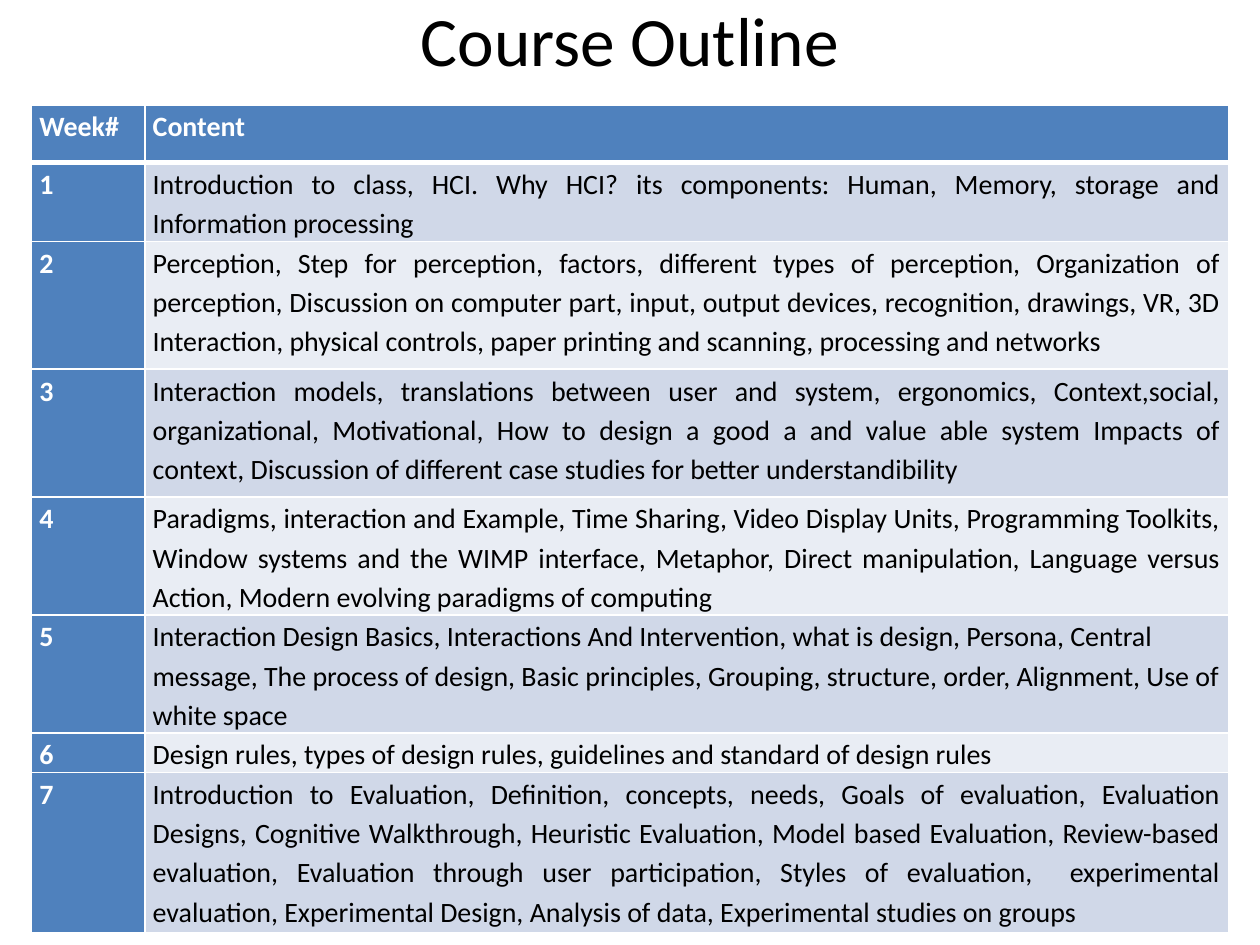
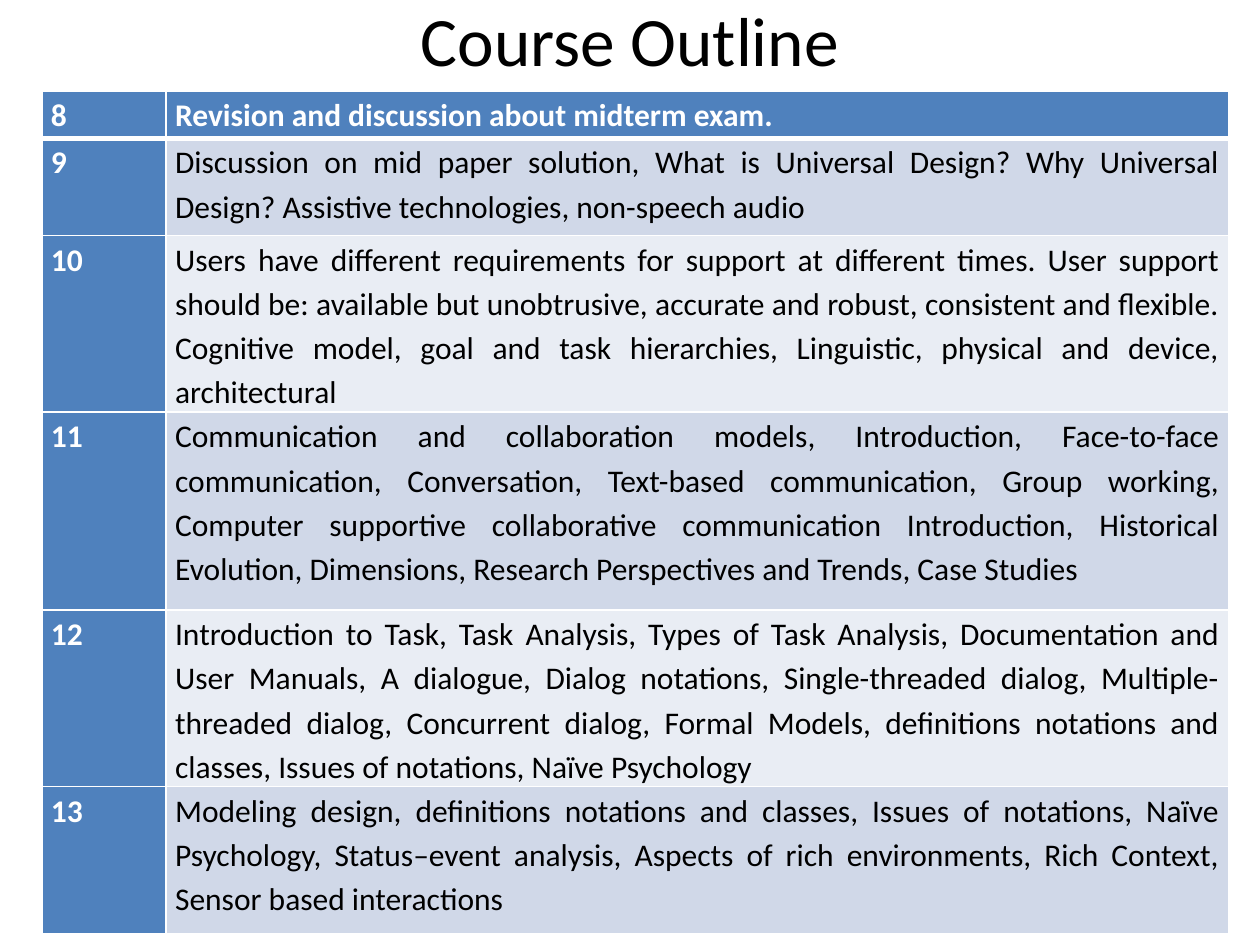
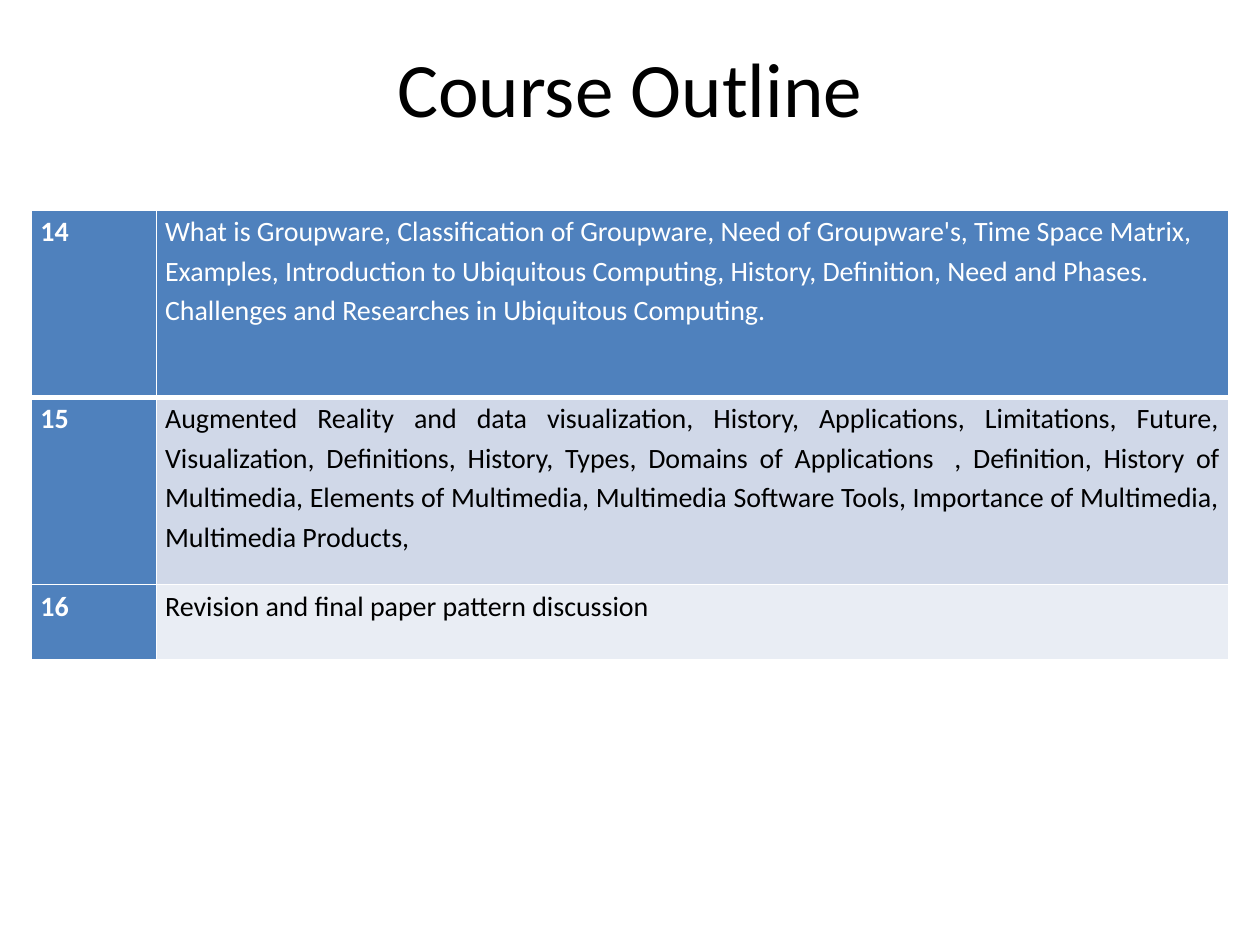
"""Build the three course outline slides, each a title above a table of weeks."""
from dataclasses import dataclass

from lxml.etree import SubElement
from pptx import Presentation
from pptx.dml.color import RGBColor
from pptx.enum.text import MSO_ANCHOR, MSO_AUTO_SIZE, PP_ALIGN
from pptx.oxml.ns import qn
from pptx.slide import Slide
from pptx.table import _Cell
from pptx.text.text import _Paragraph
from pptx.util import Pt

FONT = "Calibri"
COLORS = {
    "head": "4F81BD",
    "odd": "D0D8E8",
    "even": "E9EDF4",
    "light": "FFFFFF",
    "dark": "000000",
}
TITLE = "Course Outline"


@dataclass
class Week:
    label: str
    text: str
    height: float
    left: bool = False


@dataclass
class Head:
    top: float
    height: float
    size: float


@dataclass
class Plan:
    head: Head
    left: float
    top: float
    cols: tuple[float, float]
    size: float
    inset: float
    weeks: list[Week]
    bold: bool = True


SMALL = Head(2, 40, 39.6)
LARGE = Head(18, 63, 44)

PLANS = [
    Plan(SMALL, 18, 60, (64.8, 619.2), 16, 4.5, [
        Week("Week#", "Content", 33),
        Week("1", "Introduction to class, HCI. Why HCI? its components: Human, Memory, "
             "storage and Information processing", 39.6),
        Week("2", "Perception, Step for perception, factors, different types of perception, "
             "Organization of perception, Discussion on computer part, input, output devices, "
             "recognition, drawings, VR, 3D Interaction, physical controls, paper printing and "
             "scanning, processing and networks", 73),
        Week("3", "Interaction models, translations between user and system, ergonomics, "
             "Context,social, organizational, Motivational, How to design a good a and value "
             "able system Impacts of context, Discussion of different case studies for better "
             "understandibility", 73),
        Week("4", "Paradigms, interaction and Example, Time Sharing, Video Display Units, "
             "Programming Toolkits, Window systems and the WIMP interface, Metaphor, Direct "
             "manipulation, Language versus Action, Modern evolving paradigms of computing", 60.5),
        Week("5", "Interaction Design Basics, Interactions And Intervention, what is design, "
             "Persona, Central message, The process of design, Basic principles, Grouping, "
             "structure, order, Alignment, Use of white space", 60.5, True),
        Week("6", "Design rules, types of design rules, guidelines and standard of design rules",
             19.5, True),
        Week("7", "Introduction to Evaluation, Definition, concepts, needs, Goals of evaluation, "
             "Evaluation Designs, Cognitive Walkthrough, Heuristic Evaluation, Model based "
             "Evaluation, Review-based evaluation, Evaluation through user participation, Styles "
             "of evaluation,  experimental evaluation, Experimental Design, Analysis of data, "
             "Experimental studies on groups", 91.5),
    ]),
    Plan(SMALL, 24, 52, (71, 607), 18, 5.1, [
        Week("8", "Revision and discussion about midterm exam.", 27),
        Week("9", "Discussion on mid paper solution, What is Universal Design? Why Universal "
             "Design? Assistive technologies, non-speech audio", 55.5),
        Week("10", "Users have different requirements for support at different times. User "
             "support should be: available but unobtrusive, accurate and robust, consistent and "
             "flexible. Cognitive model, goal and task hierarchies, Linguistic, physical and "
             "device, architectural", 97),
        Week("11", "Communication and collaboration models, Introduction, Face-to-face "
             "communication, Conversation, Text-based communication, Group working, Computer "
             "supportive collaborative communication Introduction, Historical Evolution, "
             "Dimensions, Research Perspectives and Trends, Case Studies", 113),
        Week("12", "Introduction to Task, Task Analysis, Types of Task Analysis, Documentation "
             "and User Manuals, A dialogue, Dialog notations, Single-threaded dialog, "
             "Multiple-threaded dialog, Concurrent dialog, Formal Models, definitions notations "
             "and classes, Issues of notations, Naïve Psychology", 97),
        Week("13", "Modeling design, definitions notations and classes, Issues of notations, "
             "Naïve Psychology, Status–event analysis, Aspects of rich environments, Rich "
             "Context, Sensor based interactions", 84),
    ]),
    Plan(LARGE, 18, 120, (71.3, 612.7), 16, 5.1, [
        Week("14", "What is Groupware, Classification of Groupware, Need of Groupware's, Time "
             "Space Matrix, Examples, Introduction to Ubiquitous Computing, History, "
             "Definition, Need and Phases. Challenges and Researches in Ubiquitous Computing.",
             107, True),
        Week("15", "Augmented Reality and data visualization, History, Applications, "
             "Limitations, Future, Visualization, Definitions, History, Types, Domains of "
             "Applications\t, Definition, History of Multimedia, Elements of Multimedia, "
             "Multimedia Software Tools, Importance of Multimedia, Multimedia Products,", 107),
        Week("16", "Revision and final paper pattern discussion", 43),
    ], bold=False),
]


def style(para: _Paragraph, size: float, color: str, bold: bool) -> None:
    for run in para.runs:
        font = run.font
        font.name, font.size, font.bold = FONT, Pt(size), bold
        font.color.rgb = RGBColor.from_string(COLORS[color])


def edge(cell: _Cell, row: int) -> None:
    props = cell._tc.get_or_add_tcPr()
    thick = {0: "lnB", 1: "lnT"}.get(row)
    for side in ("lnL", "lnR", "lnT", "lnB"):
        width = Pt(3 if side == thick else 1)
        line = SubElement(props, qn(f"a:{side}"), w=str(width))
        fill = SubElement(line, qn("a:solidFill"))
        SubElement(fill, qn("a:srgbClr"), val=COLORS["light"])


def fill_cell(cell: _Cell, text: str, row: int, fill: str, plan: Plan,
              bold: bool, left: bool) -> None:
    edge(cell, row)
    cell.fill.solid()
    cell.fill.fore_color.rgb = RGBColor.from_string(COLORS[fill])
    cell.margin_left = cell.margin_right = Pt(plan.inset)
    cell.margin_top = cell.margin_bottom = Pt(0)
    cell.text_frame.text = text
    para = cell.text_frame.paragraphs[0]
    para.alignment = PP_ALIGN.LEFT if left else PP_ALIGN.JUSTIFY
    para.line_spacing = 1.15
    tabs = SubElement(para._p.get_or_add_pPr(), qn("a:tabLst"))
    SubElement(tabs, qn("a:tab"), pos=str(Pt(-36)), algn="l")
    style(para, plan.size, "light" if fill == "head" else "dark", bold)


def add_title(slide: Slide, head: Head) -> None:
    title = slide.shapes.title
    title.left, title.top = Pt(36), Pt(head.top)
    title.width, title.height = Pt(648), Pt(head.height)
    frame = title.text_frame
    frame.text = TITLE
    frame.auto_size = MSO_AUTO_SIZE.NONE
    frame.vertical_anchor = MSO_ANCHOR.MIDDLE
    frame.paragraphs[0].alignment = PP_ALIGN.CENTER
    style(frame.paragraphs[0], head.size, "dark", False)


def add_weeks(slide: Slide, plan: Plan) -> None:
    height = sum(week.height for week in plan.weeks)
    table = slide.shapes.add_table(
        len(plan.weeks), 2, Pt(plan.left), Pt(plan.top), Pt(sum(plan.cols)), Pt(height)
    ).table
    for col, width in zip(table.columns, plan.cols):
        col.width = Pt(width)
    for row, week in enumerate(plan.weeks):
        table.rows[row].height = Pt(week.height)
        band = "head" if row == 0 else "odd" if row % 2 else "even"
        fill_cell(table.cell(row, 0), week.label, row, "head", plan, True, False)
        fill_cell(table.cell(row, 1), week.text, row, band, plan,
                  row == 0 and plan.bold, week.left)


def main() -> None:
    deck = Presentation()
    deck.slide_width, deck.slide_height = Pt(720), Pt(540)
    for plan in PLANS:
        slide = deck.slides.add_slide(deck.slide_layouts[5])
        add_title(slide, plan.head)
        add_weeks(slide, plan)
    deck.save("out.pptx")


if __name__ == "__main__":
    main()
